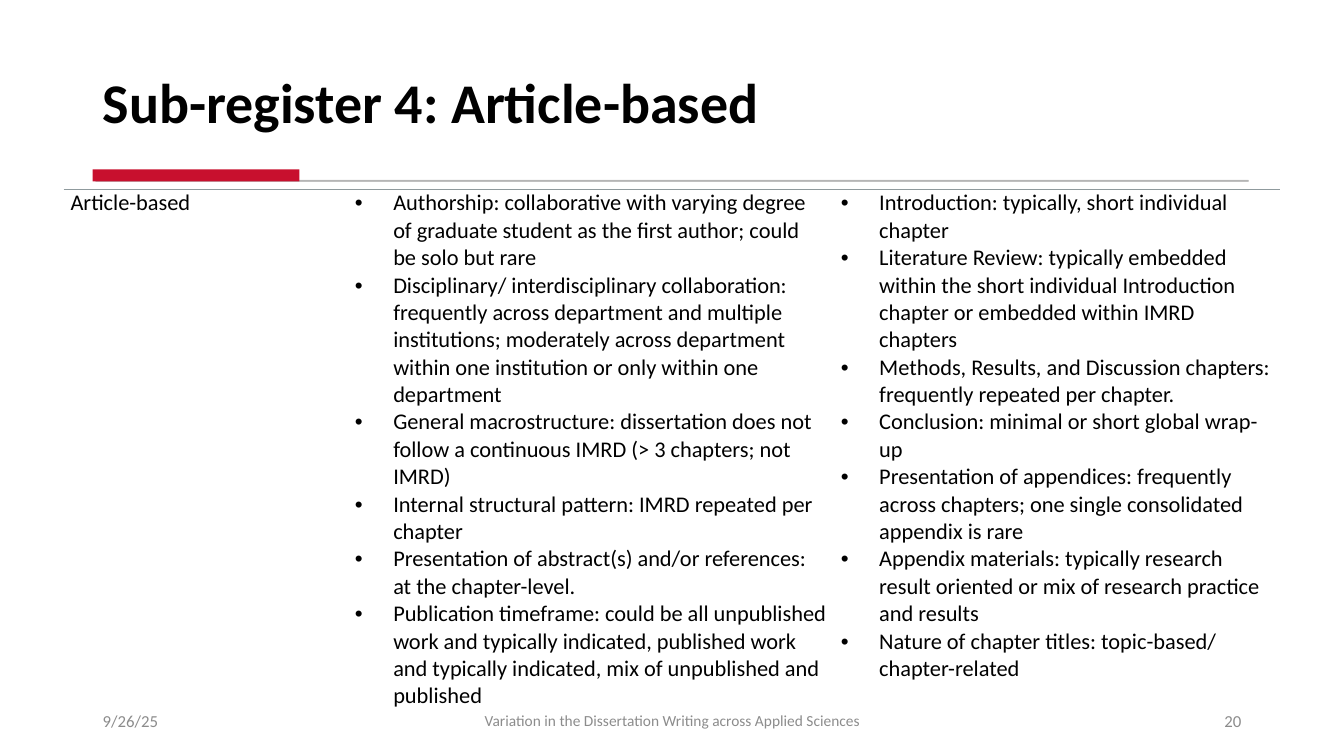
import pptx
import pptx.dml.color
import pptx.enum.shapes
import pptx.enum.text
import pptx.oxml
import pptx.oxml.ns
import pptx.util

RGBColor = pptx.dml.color.RGBColor
ALIGN = pptx.enum.text.PP_ALIGN
ANCHOR = pptx.enum.text.MSO_ANCHOR

BLACK = RGBColor(0x00, 0x00, 0x00)
RED = RGBColor(0xC8, 0x10, 0x2E)
RULE_GRAY = RGBColor(0x59, 0x59, 0x59)
FOOTER_GRAY = RGBColor(0x8C, 0x8C, 0x8C)
BORDER_GRAY = RGBColor(0x8F, 0x9A, 0x9D)

FONT = "Calibri"
SLIDE_WIDTH = pptx.util.Inches(13.33)
SLIDE_HEIGHT = pptx.util.Inches(7.5)
BULLET_INDENT = pptx.util.Inches(0.38)
BULLET_TAB = pptx.util.Inches(0.83)

# Horizontal and vertical lengths are percentages of the slide
MARGIN = 6.9
FOOTER_TOP, FOOTER_HEIGHT = 92.67, 5.33
TABLE_LEFT, TABLE_TOP, TABLE_HEIGHT = 4.73, 25.07, 67.6
COLUMN_WIDTHS = (21.16, 36.16, 33.16)

SUB_REGISTER = ["Article-based"]
SITUATION = [
    "Authorship: collaborative with varying degree of graduate student as the first author; "
    "could be solo but rare",
    "Disciplinary/ interdisciplinary collaboration: frequently across department and multiple "
    "institutions; moderately across department within one institution or only within one department",
    "General macrostructure: dissertation does not follow a continuous IMRD (> 3 chapters; not IMRD)",
    "Internal structural pattern: IMRD repeated per chapter",
    "Presentation of abstract(s) and/or references: at the chapter-level.",
    "Publication timeframe: could be all unpublished work and typically indicated, published work "
    "and typically indicated, mix of unpublished and published",
]
CHAPTERS = [
    "Introduction: typically, short individual chapter",
    "Literature Review: typically embedded within the short individual Introduction chapter "
    "or embedded within IMRD chapters",
    "Methods, Results, and Discussion chapters: frequently repeated per chapter.",
    "Conclusion: minimal or short global wrap-up",
    "Presentation of appendices: frequently across chapters; one single consolidated appendix is rare",
    "Appendix materials: typically research result oriented or mix of research practice and results",
    "Nature of chapter titles: topic-based/ chapter-related",
]


def across(percent):
    return round(SLIDE_WIDTH * percent / 100)


def down(percent):
    return round(SLIDE_HEIGHT * percent / 100)


def area(left, top, width, height):
    return across(left), down(top), across(width), down(height)


def format_runs(paragraph, size, color, bold=False):
    for run in paragraph.runs:
        run.font.name = FONT
        run.font.size = pptx.util.Pt(size)
        run.font.bold = bold
        run.font.color.rgb = color


def add_text(slide, box, text, size, color, anchor, align=ALIGN.LEFT, bold=False):
    text_frame = slide.shapes.add_textbox(*area(*box)).text_frame
    text_frame.word_wrap = True
    text_frame.vertical_anchor = anchor
    text_frame.text = text
    paragraph = text_frame.paragraphs[0]
    paragraph.alignment = align
    format_runs(paragraph, size, color, bold)
    return paragraph


def add_bar(slide, box, color):
    shape = slide.shapes.add_shape(pptx.enum.shapes.MSO_SHAPE.RECTANGLE, *area(*box))
    shape.shadow.inherit = False
    shape.fill.solid()
    shape.fill.fore_color.rgb = color
    shape.line.fill.background()
    return shape


def set_opacity(element, percent):
    for color in element.iter(pptx.oxml.ns.qn("a:srgbClr")):
        alpha = pptx.oxml.parse_xml(
            f'<a:alpha {pptx.oxml.ns.nsdecls("a")} val="{percent * 1000}"/>')
        color.append(alpha)


def add_bullet(paragraph):
    properties = paragraph._p.get_or_add_pPr()
    properties.set("marL", str(BULLET_INDENT))
    properties.set("indent", str(-BULLET_INDENT))
    namespace = pptx.oxml.ns.nsdecls("a")
    for xml in (
        f'<a:buFont {namespace} typeface="Arial"/>',
        f'<a:buChar {namespace} char="•"/>',
        f'<a:tabLst {namespace}><a:tab pos="{BULLET_TAB}" algn="l"/></a:tabLst>',
    ):
        properties.append(pptx.oxml.parse_xml(xml))


def set_borders(cell):
    """Draw a line along the top of the cell only."""
    top_fill = (f'<a:solidFill><a:srgbClr val="{BORDER_GRAY}">'
                '<a:alpha val="60000"/></a:srgbClr></a:solidFill>')
    properties = cell._tc.get_or_add_tcPr()
    for position, side in enumerate("LRTB"):
        fill = top_fill if side == "T" else "<a:noFill/>"
        properties.insert(position, pptx.oxml.parse_xml(
            f'<a:ln{side} {pptx.oxml.ns.nsdecls("a")} w="{pptx.util.Pt(1.5)}">{fill}</a:ln{side}>'))


def fill_cell(cell, lines, bulleted):
    cell.fill.background()
    set_borders(cell)
    cell.margin_left = cell.margin_right = pptx.util.Inches(0.07)
    cell.margin_top = cell.margin_bottom = 0
    cell.text_frame.text = "\n".join(lines)
    for paragraph in cell.text_frame.paragraphs:
        if bulleted:
            add_bullet(paragraph)
        format_runs(paragraph, 16, BLACK)


def add_register_table(slide):
    box = area(TABLE_LEFT, TABLE_TOP, sum(COLUMN_WIDTHS), TABLE_HEIGHT)
    table = slide.shapes.add_table(1, len(COLUMN_WIDTHS), *box).table
    table.first_row = table.horz_banding = False
    contents = (SUB_REGISTER, SITUATION, CHAPTERS)
    for index, (width, lines) in enumerate(zip(COLUMN_WIDTHS, contents)):
        table.columns[index].width = across(width)
        fill_cell(table.cell(0, index), lines, bulleted=index > 0)


def add_footer(slide):
    for left, width, text, size, align in (
        (MARGIN, 21.15, "9/26/25", 12, ALIGN.LEFT),
        (33.16, 33.76, "Variation in the Dissertation Writing across Applied Sciences", 11, ALIGN.CENTER),
        (72.77, 20.33, "20", 12, ALIGN.RIGHT),
    ):
        paragraph = add_text(slide, (left, FOOTER_TOP, width, FOOTER_HEIGHT), text, size,
                             FOOTER_GRAY, ANCHOR.MIDDLE, align)
        paragraph.space_after = pptx.util.Pt(6)


def main():
    presentation = pptx.Presentation()
    presentation.slide_width = SLIDE_WIDTH
    presentation.slide_height = SLIDE_HEIGHT
    slide = presentation.slides.add_slide(presentation.slide_layouts[6])

    # Title
    title = add_text(slide, (MARGIN, 3.73, 86.2, 14.8), "Sub-register 4: Article-based",
                     40, BLACK, ANCHOR.BOTTOM, bold=True)
    title.line_spacing = 0.9

    # Thin rule with the red accent on it
    rule = add_bar(slide, (7.13, 23.87, 85.75, 0.13), RULE_GRAY)
    rule.line.color.rgb = RULE_GRAY
    rule.line.width = pptx.util.Pt(0.75)
    set_opacity(rule._element.spPr, 30)
    add_bar(slide, (MARGIN, 22.4, 15.38, 1.6), RED)

    # Footer and table
    add_footer(slide)
    add_register_table(slide)

    presentation.save("out.pptx")


if __name__ == "__main__":
    main()
